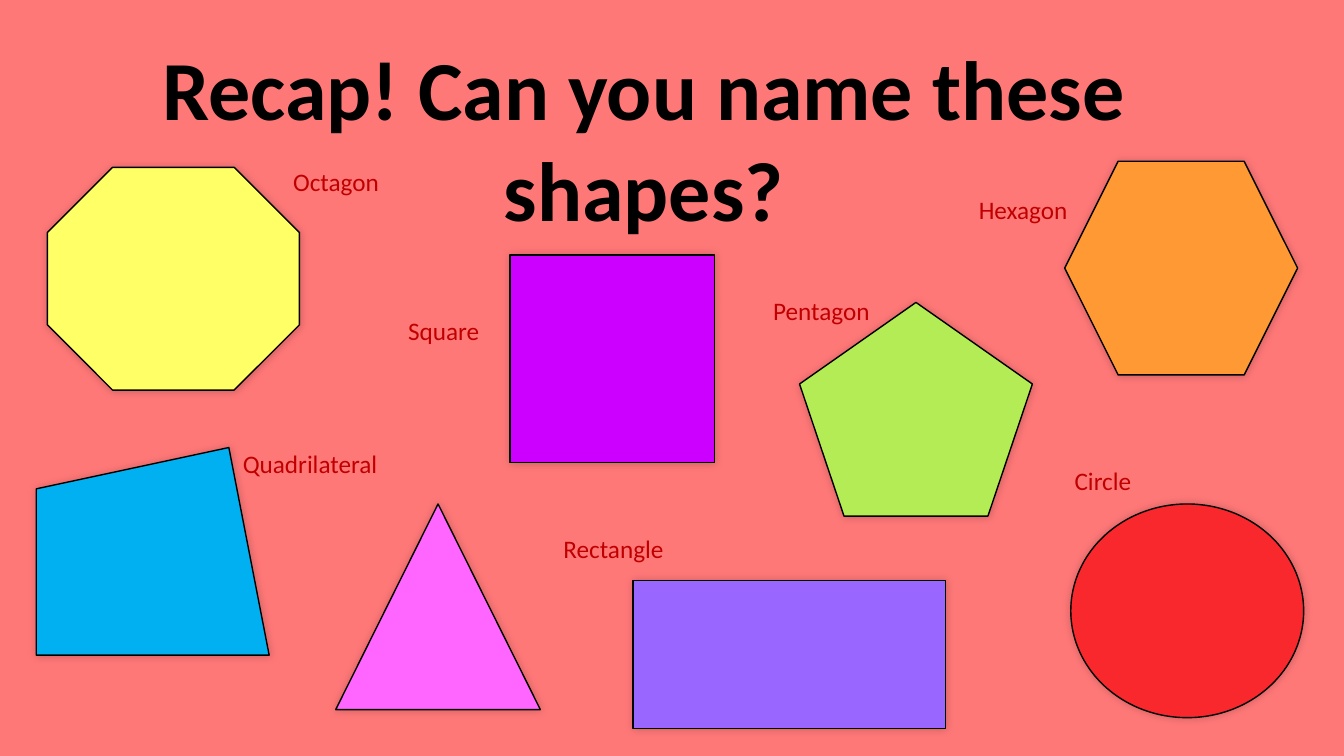
from dataclasses import dataclass

from lxml import etree
from pptx import Presentation
from pptx.dml.color import RGBColor
from pptx.enum.shapes import MSO_SHAPE
from pptx.enum.text import MSO_ANCHOR, MSO_AUTO_SIZE, PP_ALIGN
from pptx.oxml.ns import qn
from pptx.util import Pt

PX = 9144  # EMU; 100 px to the inch
TITLE_ONLY = 5
OCTAGON, HEXAGON = MSO_SHAPE.OCTAGON, MSO_SHAPE.HEXAGON
PENTAGON, ELLIPSE = MSO_SHAPE.REGULAR_PENTAGON, MSO_SHAPE.OVAL
RECTANGLE, TRIANGLE = MSO_SHAPE.FLOWCHART_PROCESS, MSO_SHAPE.ISOSCELES_TRIANGLE
TOP, CENTER = MSO_ANCHOR.TOP, PP_ALIGN.CENTER
FIT_SHAPE = MSO_AUTO_SIZE.SHAPE_TO_FIT_TEXT


@dataclass(frozen=True)
class Theme:
    font: str = "Calibri"
    background: str = "FF7878"
    ink: str = "000000"
    label: str = "C00000"
    title_size: int = 60
    label_size: int = 18
    outline: int = 1
    shadow_blur: int = 6
    shadow_opacity: int = 20


THEME = Theme()

# kind, fill, box (left, top, width, height) in px
FIGURES = [
    (ELLIPSE, "F9282D", (1062, 500, 231, 212)),
    (HEXAGON, "FF9933", (1056, 160, 231, 212)),
    (OCTAGON, "FFFF66", (47, 166, 250, 221)),
    (PENTAGON, "B3EC55", (793, 300, 231, 212)),
    (RECTANGLE, "9966FF", (628, 576, 310, 147)),
    (RECTANGLE, "CC00FF", (506, 253, 203, 206)),
    (TRIANGLE, "FF66FF", (333, 500, 203, 204)),
]
QUADRILATERAL_FILL = "00B0F0"
QUADRILATERAL_BOX = (36, 444, 231, 206)
LABEL_WIDTH, LABEL_HEIGHT = 157, 40
LABELS = [
    ("Octagon", 281, 160),
    ("Quadrilateral", 231, 440),
    ("Square", 395, 308),
    ("Pentagon", 757, 288),
    ("Hexagon", 961, 188),
    ("Rectangle", 549, 524),
    ("Circle", 1056, 457),
]


def color(value):
    return RGBColor.from_string(value)


def emu(box):
    return [length * PX for length in box]


def set_font(paragraph, size, ink, bold=False):
    font = paragraph.font
    font.name, font.size, font.bold = THEME.font, Pt(size), bold
    font.color.rgb = color(ink)


def add_glow(figure):
    """Give the figure a soft, centred shadow."""
    effects = etree.SubElement(figure._element.spPr, qn("a:effectLst"))
    shadow = etree.SubElement(
        effects, qn("a:outerShdw"), blurRad=str(Pt(THEME.shadow_blur)),
        dist="0", dir=str(315 * 60000), algn="ctr", rotWithShape="0")
    ink = etree.SubElement(shadow, qn("a:srgbClr"), val=THEME.ink)
    etree.SubElement(ink, qn("a:alpha"), val=str(THEME.shadow_opacity * 1000))


def paint(figure, fill):
    figure.fill.solid()
    figure.fill.fore_color.rgb = color(fill)
    figure.line.color.rgb = color(THEME.ink)
    figure.line.width = Pt(THEME.outline)
    add_glow(figure)


def add_title(slide, box):
    title = slide.shapes.title
    title.left, title.top, title.width, title.height = emu(box)
    frame = title.text_frame
    frame.text = "Recap! Can you name these shapes?"
    frame.word_wrap, frame.auto_size = True, FIT_SHAPE
    frame.vertical_anchor = TOP
    heading = frame.paragraphs[0]
    heading.alignment = CENTER
    set_font(heading, THEME.title_size, THEME.ink, bold=True)


def add_quadrilateral(slide, box):
    left, top, width, height = box
    right, bottom = left + width, top + height
    upper_left = (left, top + 41)
    builder = slide.shapes.build_freeform(*upper_left, scale=PX)
    builder.add_line_segments(
        [(right - 40, top), (right, bottom), (left, bottom)], close=True)
    paint(builder.convert_to_shape(), QUADRILATERAL_FILL)


def add_figure(slide, kind, fill, box):
    paint(slide.shapes.add_shape(kind, *emu(box)), fill)


def add_label(slide, name, box):
    frame = slide.shapes.add_textbox(*emu(box)).text_frame
    frame.text = name
    frame.word_wrap, frame.auto_size = True, FIT_SHAPE
    set_font(frame.paragraphs[0], THEME.label_size, THEME.label)


def build_recap(slide):
    background = slide.background.fill
    background.solid()
    background.fore_color.rgb = color(THEME.background)
    add_title(slide, (71, 31, 1135, 212))
    for kind, fill, box in FIGURES:
        add_figure(slide, kind, fill, box)
    add_quadrilateral(slide, QUADRILATERAL_BOX)
    for name, left, top in LABELS:
        add_label(slide, name, (left, top, LABEL_WIDTH, LABEL_HEIGHT))


def main():
    deck = Presentation()
    deck.slide_width, deck.slide_height = emu((1333, 750))
    build_recap(deck.slides.add_slide(deck.slide_layouts[TITLE_ONLY]))
    deck.save("out.pptx")


if __name__ == "__main__":
    main()
